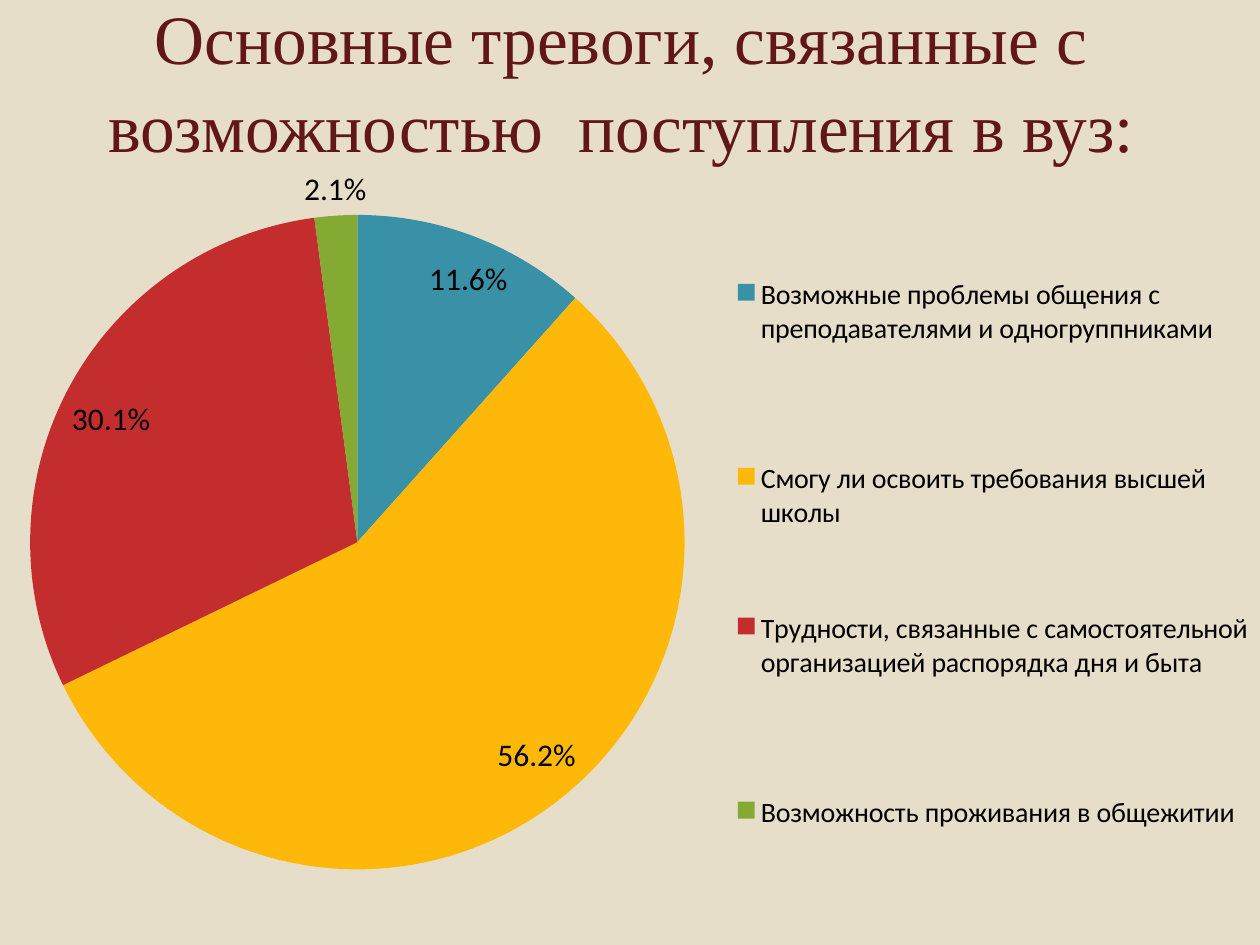
from lxml import etree
from pptx import Presentation
from pptx.chart.data import CategoryChartData
from pptx.dml.color import RGBColor
from pptx.enum.chart import XL_CHART_TYPE, XL_LABEL_POSITION, XL_LEGEND_POSITION
from pptx.enum.text import MSO_ANCHOR, PP_ALIGN
from pptx.oxml.ns import qn
from pptx.util import Inches, Pt

PIE = XL_CHART_TYPE.PIE
BEST_FIT = XL_LABEL_POSITION.BEST_FIT
RIGHT = XL_LEGEND_POSITION.RIGHT
MIDDLE, CENTER = MSO_ANCHOR.MIDDLE, PP_ALIGN.CENTER

SLIDE_W, SLIDE_H = 10, 7.5
COLORS = {
    "background": "E7DEC9", "title": "621717", "text": "000000",
    "teal": "3891A7", "amber": "FEB80A", "red": "C32D2E", "green": "84AA33",
}
TITLE = "Основные тревоги, связанные с возможностью  поступления в вуз:"
# Category, share in percent, slice colour; a closing line break spaces the legend
WORRIES = [
    ("Возможные проблемы общения с преподавателями и одногруппниками\n", 11.6, "teal"),
    ("Смогу ли освоить требования высшей школы", 56.2, "amber"),
    ("Трудности, связанные с самостоятельной организацией распорядка дня и быта\n",
     30.1, "red"),
    ("Возможность проживания в общежитии\n", 2.1, "green"),
]


def rgb(name):
    return RGBColor.from_string(COLORS[name])


def set_font(font, name, size, color):
    font.name, font.size = name, Pt(size)
    font.color.rgb = rgb(color)


def manual_layout(x, y, w, h, inner=False):
    """Return a c:layout element; lengths are shares of the chart's size."""
    layout = etree.Element(qn("c:layout"))
    manual = etree.SubElement(layout, qn("c:manualLayout"))
    settings = [("layoutTarget", "inner")] if inner else []
    settings += [("xMode", "edge"), ("yMode", "edge"),
                 ("x", x), ("y", y), ("w", w), ("h", h)]
    for tag, value in settings:
        etree.SubElement(manual, qn(f"c:{tag}")).set("val", str(value))
    return layout


def add_title(slide, box):
    tf = slide.shapes.add_textbox(*box).text_frame
    tf.word_wrap = True
    tf.vertical_anchor = MIDDLE
    p = tf.paragraphs[0]
    p.text = TITLE
    p.alignment = CENTER
    p.line_spacing = 1.05
    set_font(p.font, "Times New Roman", 39.6, "title")


def add_worries_pie(slide, box):
    data = CategoryChartData()
    data.categories = [category for category, _, _ in WORRIES]
    data.add_series("Series 1", [share for _, share, _ in WORRIES])
    chart = slide.shapes.add_chart(PIE, *box, data).chart
    chart.has_title = False
    set_font(chart.font, "Calibri", 18, "text")

    plot = chart.plots[0]
    plot.vary_by_categories = True
    for i, (_, _, color) in enumerate(WORRIES):
        fill = plot.series[0].points[i].format.fill
        fill.solid()
        fill.fore_color.rgb = rgb(color)

    plot.has_data_labels = True
    labels = plot.data_labels
    labels.show_percentage, labels.show_value = True, False
    labels.number_format, labels.number_format_is_linked = "0.0%", False
    labels.position = BEST_FIT
    set_font(labels.font, "Calibri", 18, "text")

    chart.has_legend = True
    legend = chart.legend
    legend.position = RIGHT
    legend.include_in_layout = False
    set_font(legend.font, "Calibri", 16, "text")

    area = chart._chartSpace.chart.plotArea
    for old in area.findall(qn("c:layout")):
        area.remove(old)
    area.insert(0, manual_layout(0.02, 0.07, 0.52, 0.79, inner=True))
    key = legend._element
    for old in key.findall(qn("c:layout")):
        key.remove(old)
    key.find(qn("c:legendPos")).addnext(manual_layout(0.57, 0.05, 0.43, 0.9))


def main():
    prs = Presentation()
    prs.slide_width, prs.slide_height = Inches(SLIDE_W), Inches(SLIDE_H)
    slide = prs.slides.add_slide(prs.slide_layouts[6])
    fill = slide.background.fill
    fill.solid()
    fill.fore_color.rgb = rgb("background")
    add_title(slide, [Inches(v) for v in (0.43, 0, 9, 1.25)])
    add_worries_pie(slide, [Inches(v) for v in (0.04, 1.23, 9.99, 6.61)])
    prs.save("out.pptx")


if __name__ == "__main__":
    main()
